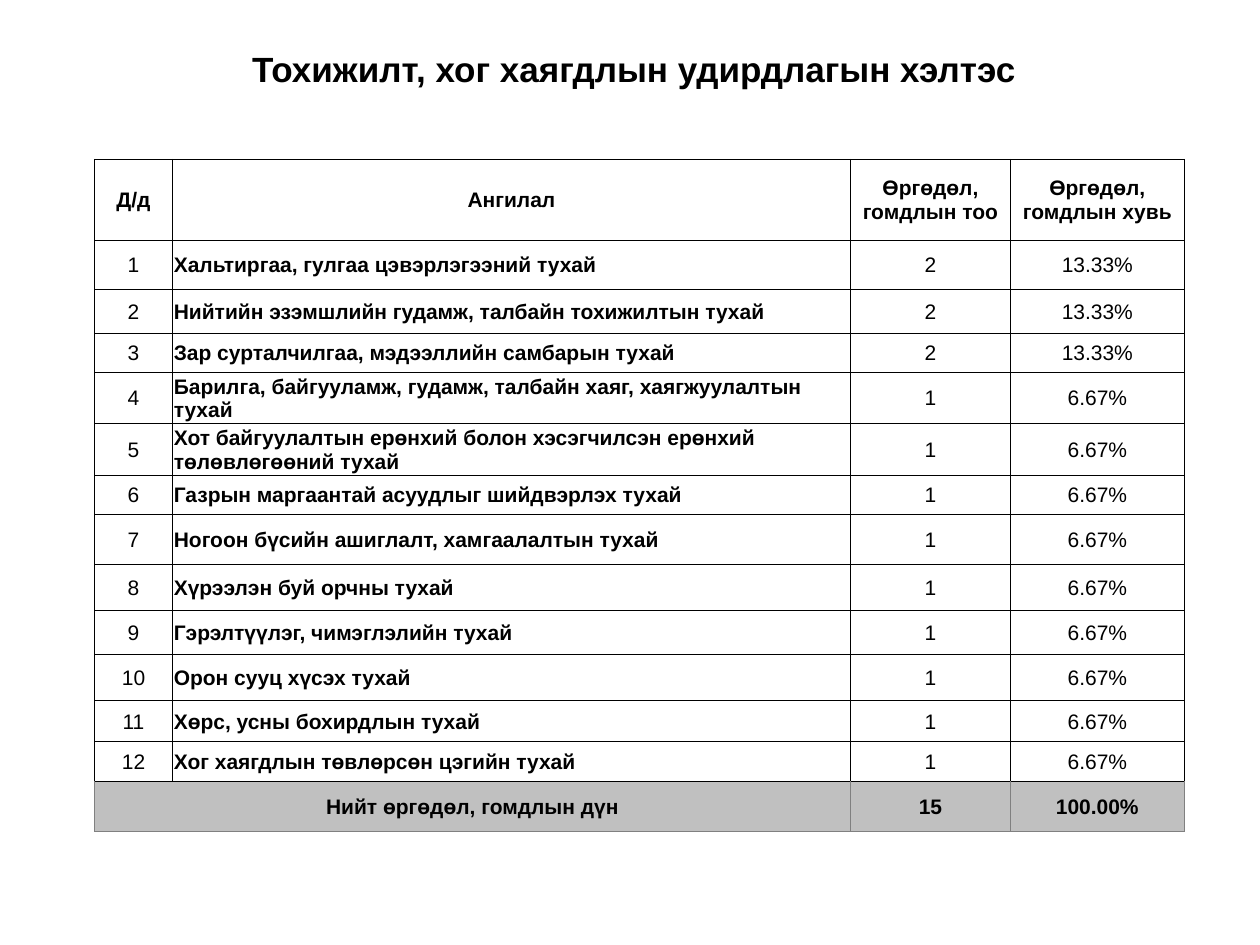
"""Build a one-slide table of complaints by category for a city department."""
from dataclasses import dataclass

from lxml.etree import SubElement
from pptx import Presentation
from pptx.dml.color import RGBColor
from pptx.enum.text import MSO_ANCHOR, MSO_AUTO_SIZE, PP_ALIGN
from pptx.oxml.ns import qn
from pptx.util import Pt

TITLE = "Тохижилт, хог хаягдлын удирдлагын хэлтэс"
HEADER = ("Д/д", "Ангилал", "Өргөдөл, гомдлын тоо", "Өргөдөл, гомдлын хувь")
CATEGORIES = [
    ("Хальтиргаа, гулгаа цэвэрлэгээний тухай", "2", "13.33%"),
    ("Нийтийн эзэмшлийн гудамж, талбайн тохижилтын тухай", "2", "13.33%"),
    ("Зар сурталчилгаа, мэдээллийн самбарын тухай", "2", "13.33%"),
    ("Барилга, байгууламж, гудамж, талбайн хаяг, хаягжуулалтын тухай", "1", "6.67%"),
    ("Хот байгуулалтын ерөнхий болон хэсэгчилсэн ерөнхий төлөвлөгөөний тухай", "1", "6.67%"),
    ("Газрын маргаантай асуудлыг шийдвэрлэх тухай", "1", "6.67%"),
    ("Ногоон бүсийн ашиглалт, хамгаалалтын тухай", "1", "6.67%"),
    ("Хүрээлэн буй орчны тухай", "1", "6.67%"),
    ("Гэрэлтүүлэг, чимэглэлийн тухай", "1", "6.67%"),
    ("Орон сууц хүсэх тухай", "1", "6.67%"),
    ("Хөрс, усны бохирдлын тухай", "1", "6.67%"),
    ("Хог хаягдлын төвлөрсөн цэгийн тухай", "1", "6.67%"),
]
TOTAL = ("Нийт өргөдөл, гомдлын дүн", "", "15", "100.00%")

LEFT, TABLE_TOP = 54, 91
COLUMN_WIDTHS = (44.64, 387.36, 91.44, 99.36)
ROW_HEIGHTS = (46.3, 28, 25.1, 22.3, 29.6, 29.2, 22.3, 29.1, 26.3, 25.1, 26.3, 23.4, 22.9, 28.3)


@dataclass(frozen=True)
class Theme:
    font: str = "Arial"
    title_size: int = 20
    cell_size: int = 12
    text: str = "000000"
    cell: str = "FFFFFF"
    total: str = "C0C0C0"
    border: str = "000000"
    total_border: str = "808080"
    border_width: float = 0.5


THEME = Theme()


def format_text(frame, size, bold, alignment):
    para = frame.paragraphs[0]
    para.alignment = alignment
    para.font.name = THEME.font
    para.font.size = Pt(size)
    para.font.bold = bold
    para.font.color.rgb = RGBColor.from_string(THEME.text)
    return para


def set_borders(cell, colors):
    properties = cell._tc.get_or_add_tcPr()
    for side, color in zip("LRTB", colors):
        line = SubElement(properties, qn(f"a:ln{side}"), w=str(Pt(THEME.border_width)))
        fill = SubElement(line, qn("a:solidFill"))
        SubElement(fill, qn("a:srgbClr"), val=color)


def format_cell(cell, text, bold, alignment, fill, borders):
    cell.text = text
    cell.vertical_anchor = MSO_ANCHOR.MIDDLE
    cell.margin_left = cell.margin_right = cell.margin_top = Pt(0.72)
    cell.margin_bottom = 0
    format_text(cell.text_frame, THEME.cell_size, bold, alignment)
    set_borders(cell, borders)
    cell.fill.solid()
    cell.fill.fore_color.rgb = RGBColor.from_string(fill)


def add_title(page):
    box = page.shapes.title
    box.left, box.top, box.width, box.height = Pt(LEFT), Pt(27.4), Pt(sum(COLUMN_WIDTHS)), Pt(51.1)
    frame = box.text_frame
    frame.text = TITLE
    frame.word_wrap = True
    frame.auto_size = MSO_AUTO_SIZE.NONE
    frame.vertical_anchor = MSO_ANCHOR.MIDDLE
    frame.margin_left, frame.margin_right = Pt(7.2), Pt(13.2)
    frame.margin_top, frame.margin_bottom = Pt(3.6), Pt(28.5)
    format_text(frame, THEME.title_size, True, PP_ALIGN.CENTER).line_spacing = 0.9


def add_category_table(page):
    numbered = [(str(number), *row) for number, row in enumerate(CATEGORIES, 1)]
    rows = [HEADER, *numbered, TOTAL]
    last = len(rows) - 1
    table = page.shapes.add_table(
        len(rows), len(HEADER), Pt(LEFT), Pt(TABLE_TOP),
        Pt(sum(COLUMN_WIDTHS)), Pt(sum(ROW_HEIGHTS)),
    ).table
    table.first_row = table.horz_banding = False
    for column, width in zip(table.columns, COLUMN_WIDTHS):
        column.width = Pt(width)
    for row, height in zip(table.rows, ROW_HEIGHTS):
        row.height = Pt(height)
    plain_borders = (THEME.border,) * 4
    gray = THEME.total_border
    total_borders = (gray, gray, THEME.border, gray)
    for r, values in enumerate(rows):
        is_total = r == last
        fill = THEME.total if is_total else THEME.cell
        borders = total_borders if is_total else plain_borders
        for c, text in enumerate(values):
            is_category = c == 1 and 0 < r < last
            bold = is_category or r in (0, last)
            alignment = PP_ALIGN.LEFT if is_category else PP_ALIGN.CENTER
            format_cell(table.cell(r, c), text, bold, alignment, fill, borders)
    table.cell(last, 0).merge(table.cell(last, 1))


def main():
    deck = Presentation()
    deck.slide_width, deck.slide_height = Pt(720), Pt(540)
    page = deck.slides.add_slide(deck.slide_layouts[5])
    add_title(page)
    add_category_table(page)
    deck.save("out.pptx")


if __name__ == "__main__":
    main()
